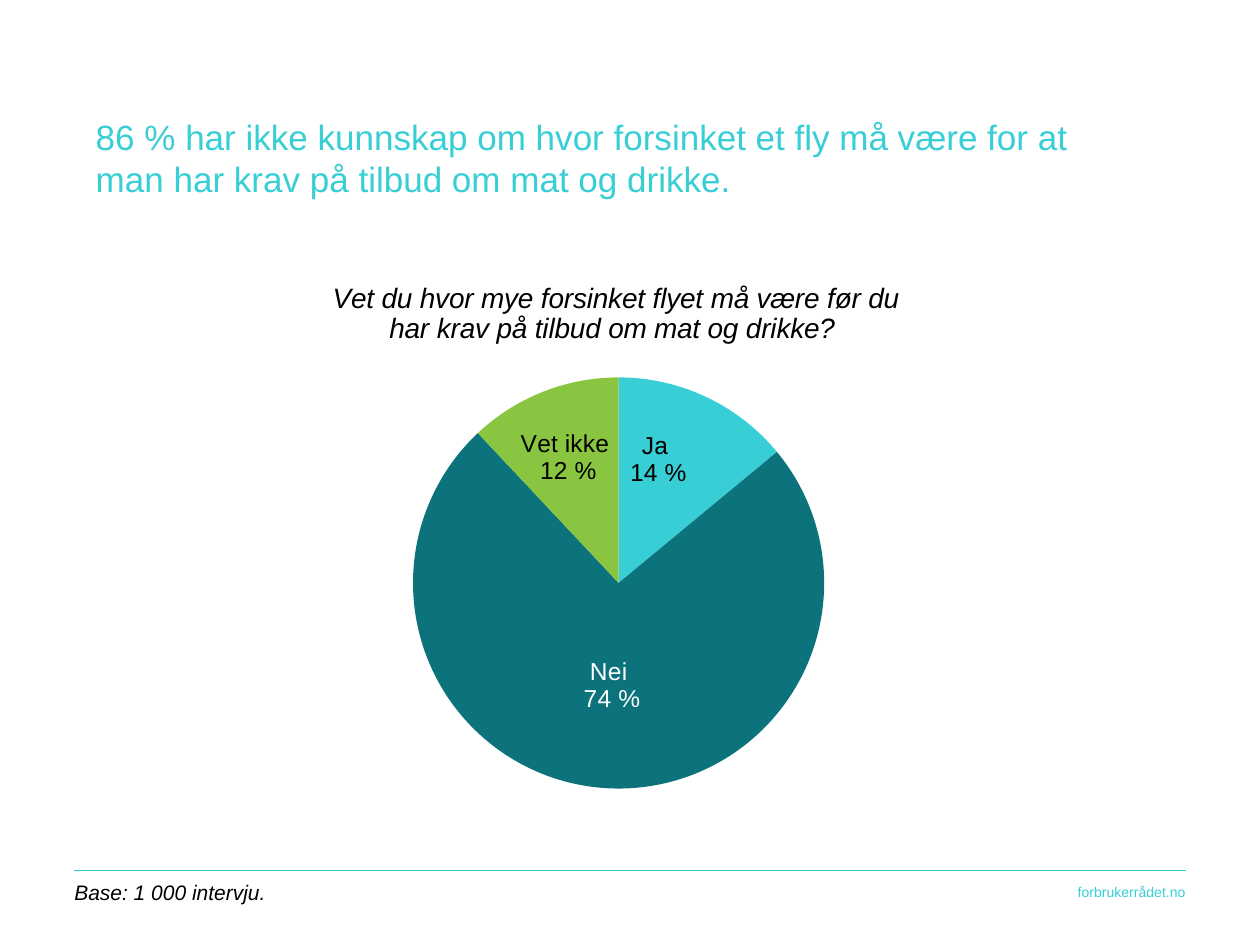
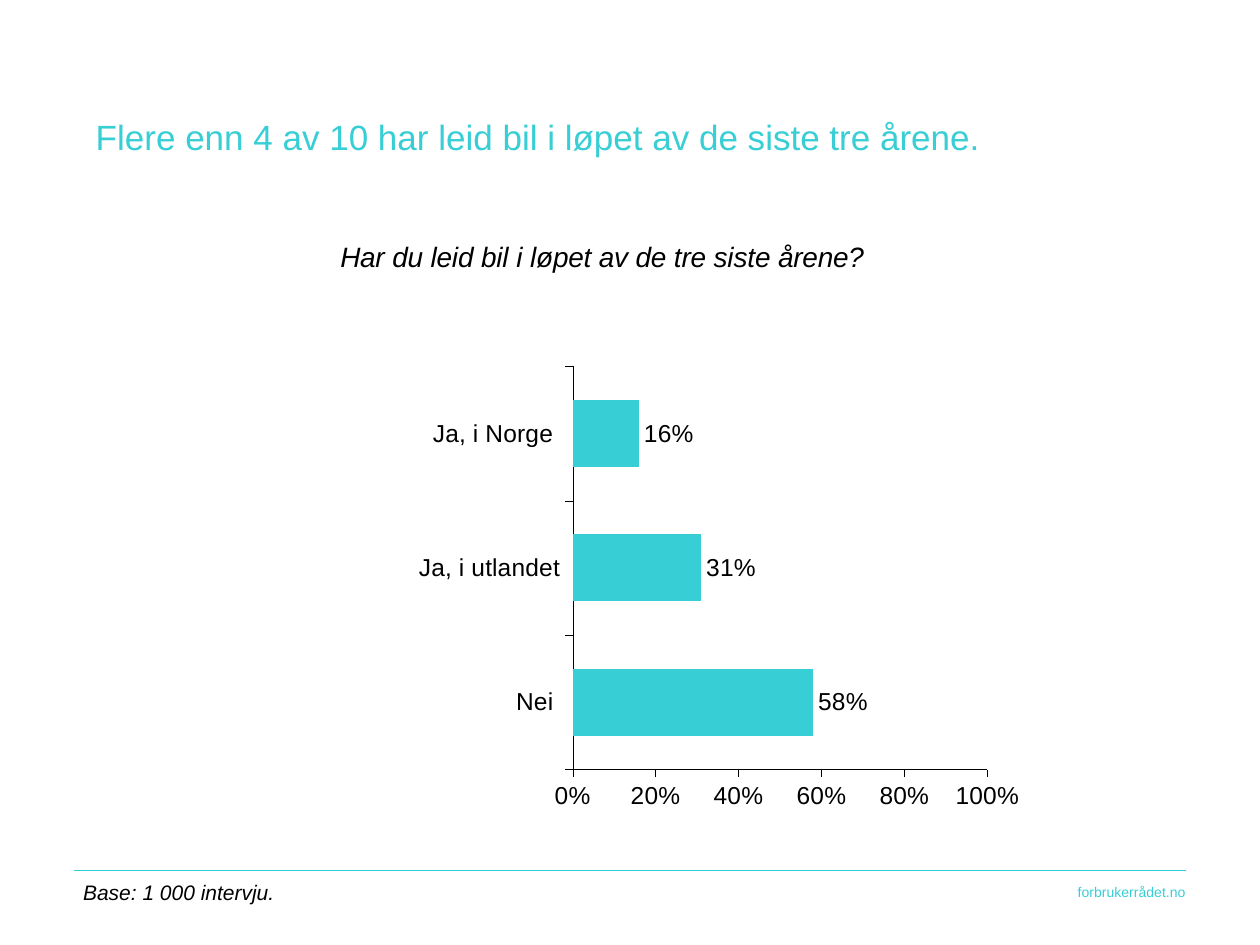
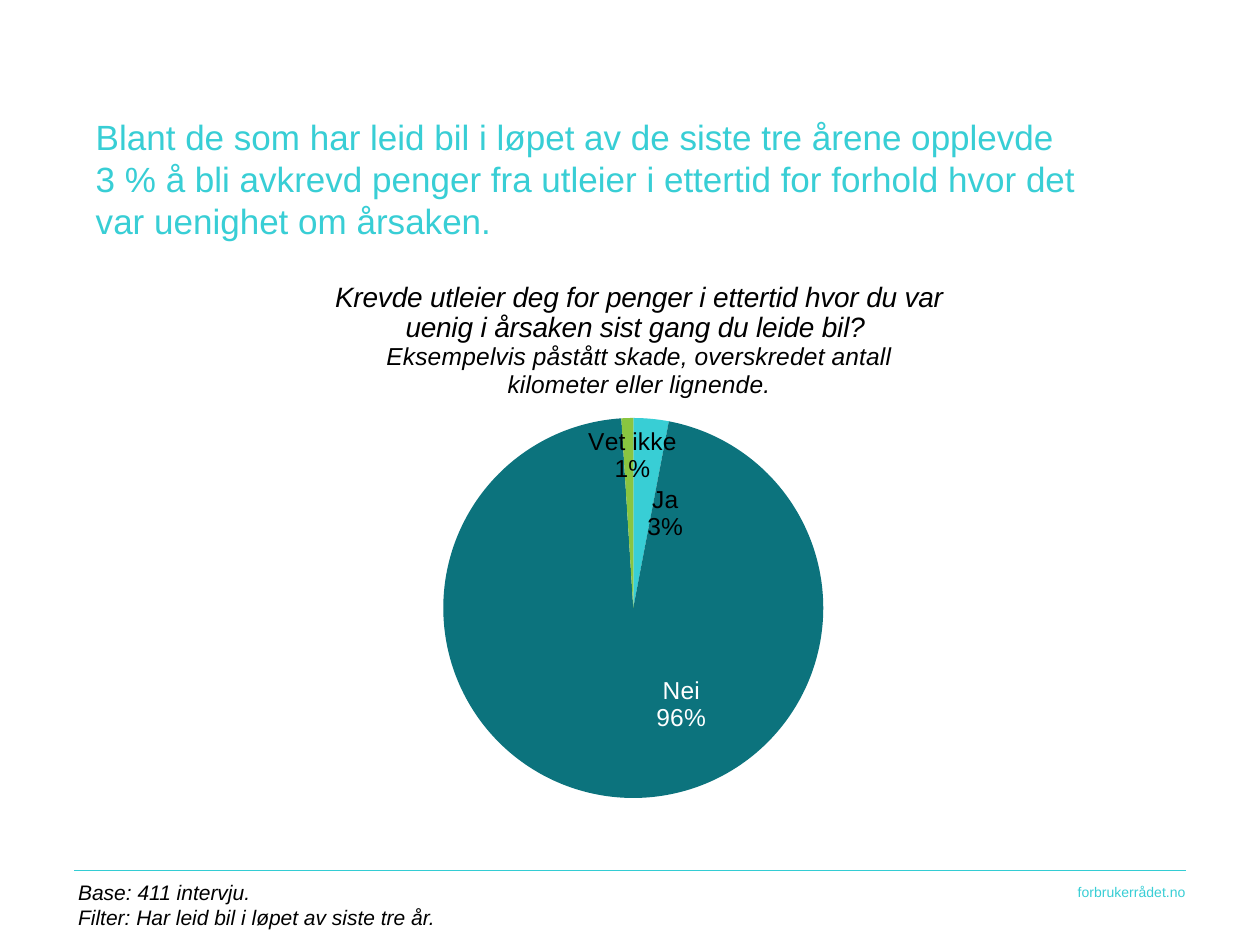
"""Builds three survey slides on flight delays and car rental."""
from dataclasses import dataclass

from lxml import etree
from pptx import Presentation
from pptx.chart.data import CategoryChartData
from pptx.dml.color import RGBColor
from pptx.enum.chart import XL_CHART_TYPE, XL_LABEL_POSITION, XL_TICK_MARK
from pptx.enum.shapes import MSO_CONNECTOR
from pptx.enum.text import MSO_ANCHOR, PP_ALIGN
from pptx.oxml.ns import qn
from pptx.util import Inches, Pt

PIE, BAR = XL_CHART_TYPE.PIE, XL_CHART_TYPE.BAR_CLUSTERED
CENTER, OUTSIDE_END = XL_LABEL_POSITION.CENTER, XL_LABEL_POSITION.OUTSIDE_END
TICK_OUT, TICK_NONE = XL_TICK_MARK.OUTSIDE, XL_TICK_MARK.NONE
STRAIGHT = MSO_CONNECTOR.STRAIGHT
TOP, BOTTOM = MSO_ANCHOR.TOP, MSO_ANCHOR.BOTTOM
LEFT, RIGHT = PP_ALIGN.LEFT, PP_ALIGN.RIGHT


@dataclass(frozen=True)
class Theme:
    """Colours, font and type sizes of the deck."""
    font: str = "Arial"
    turquoise: RGBColor = RGBColor(0x38, 0xCE, 0xD5)
    rule: RGBColor = RGBColor(0x33, 0xCD, 0xD4)
    teal: RGBColor = RGBColor(0x0C, 0x73, 0x7D)
    green: RGBColor = RGBColor(0x89, 0xC5, 0x40)
    black: RGBColor = RGBColor(0, 0, 0)
    white: RGBColor = RGBColor(255, 255, 255)
    headline: int = 20
    question: int = 16
    label: int = 14
    base: int = 12
    footer: int = 8


def set_layout(parent, index, x, y, size=None):
    """Place a chart part by percentages of the chart area."""
    previous = parent.find(qn("c:layout"))
    if previous is not None:
        parent.remove(previous)
    layout = etree.Element(qn("c:layout"))
    manual = etree.SubElement(layout, qn("c:manualLayout"))
    modes = {"xMode": "edge", "yMode": "edge"}
    if size:
        modes = {"layoutTarget": "inner", **modes}
    elif parent.tag == qn("c:dLbl"):
        modes = {}
    shares = dict(zip("xywh", (x, y, *(size or ()))))
    fractions = {key: value / 100 for key, value in shares.items()}
    for key, value in {**modes, **fractions}.items():
        etree.SubElement(manual, qn(f"c:{key}")).set("val", str(value))
    parent.insert(index, layout)


class SurveyDeck:
    """Holds the theme and the current slide, and adds elements to it."""

    def __init__(self, theme):
        self.theme = theme
        self.presentation = Presentation()
        self.presentation.slide_width = Inches(10)
        self.presentation.slide_height = Inches(7.5)
        self.slide = None

    def style(self, font, size, color, italic=False):
        """Apply the deck font."""
        font.name, font.size, font.bold = self.theme.font, Pt(size), False
        font.italic, font.color.rgb = italic, color

    def add_text(self, text, box, size, color, italic=False, align=LEFT,
                 anchor=TOP):
        """Add a text box without margins."""
        frame = self.slide.shapes.add_textbox(*map(Inches, box)).text_frame
        frame.word_wrap, frame.vertical_anchor = True, anchor
        frame.margin_left = frame.margin_right = 0
        frame.margin_top = frame.margin_bottom = 0
        frame.text = text
        for paragraph in frame.paragraphs:
            paragraph.alignment = align
            self.style(paragraph.runs[0].font, size, color, italic)

    def new_slide(self, headline, height, base, base_left):
        """Start a slide with footer, headline and base note."""
        theme = self.theme
        self.slide = self.presentation.slides.add_slide(
            self.presentation.slide_layouts[6])
        rule = self.slide.shapes.add_connector(
            STRAIGHT, Inches(0.59), Inches(6.91), Inches(9.41), Inches(6.91))
        rule.line.color.rgb, rule.line.width = theme.rule, Pt(0.92)
        etree.SubElement(rule._element.spPr, qn("a:effectLst"))
        self.add_text("forbrukerrådet.no", (6.5, 7.01, 2.91, 0.14),
                      theme.footer, theme.turquoise, align=RIGHT)
        self.add_text(headline, (0.76, 0.92, 7.95, height), theme.headline,
                      theme.turquoise)
        base_height = 0.2 * len(base.splitlines())
        self.add_text(base, (base_left, 6.98, 4.57, base_height), theme.base,
                      theme.black, italic=True, anchor=BOTTOM)

    def add_chart(self, kind, box, answers, question, question_at, plot_box,
                  number_format, detail=""):
        """Add a chart of the answers with the question as its title."""
        theme = self.theme
        data = CategoryChartData(number_format=number_format)
        data.categories = answers.keys()
        data.add_series("Series 1", answers.values())
        chart = self.slide.shapes.add_chart(
            kind, *map(Inches, box), data).chart
        self.style(chart.font, theme.label, theme.black)
        chart.has_legend, chart.has_title = False, True
        title = chart.chart_title
        title.include_in_layout = False
        title.text_frame.text = question + detail
        question_lines = len(question.splitlines())
        for number, paragraph in enumerate(title.text_frame.paragraphs):
            size = theme.question if number < question_lines else theme.label
            self.style(paragraph.font, size, theme.black, italic=True)
            self.style(paragraph.runs[0].font, size, theme.black, italic=True)
        set_layout(title._element, 1, *question_at)
        plot_area = chart._chartSpace.chart.plotArea
        set_layout(plot_area, 0, *plot_box[:2], size=plot_box[2:])
        plot = chart.plots[0]
        plot.vary_by_categories = kind == PIE
        labels = plot.series[0].data_labels
        labels.number_format = "0%"
        labels.number_format_is_linked = False
        self.style(labels.font, theme.label, theme.black)
        return chart

    def add_pie(self, label_shifts, slice_texts=(), **content):
        """Add a pie with category and share in every slice."""
        theme = self.theme
        chart = self.add_chart(PIE, **content)
        series = chart.plots[0].series[0]
        labels = series.data_labels
        labels.show_category_name, labels.position = True, CENTER
        labels.show_value = bool(slice_texts)
        labels.show_percentage = not slice_texts
        slices = ((theme.turquoise, theme.black), (theme.teal, theme.white),
                  (theme.green, theme.black))
        for index, (fill, ink) in enumerate(slices):
            point = series.points[index]
            point.format.fill.solid()
            point.format.fill.fore_color.rgb = fill
            label = point.data_label
            if slice_texts:
                label.text_frame.text = slice_texts[index]
                for paragraph in label.text_frame.paragraphs:
                    self.style(paragraph.runs[0].font, theme.label, ink)
            else:
                self.style(label.font, theme.label, ink)
            label.position = CENTER
        for label, shift in zip(labels._element.findall(qn("c:dLbl")),
                                label_shifts):
            set_layout(label, 1, *shift)
            label.find(qn("c:showCatName")).set("val", "1")
            if not slice_texts:
                label.insert(2, etree.Element(
                    qn("c:numFmt"), formatCode="0%", sourceLinked="0"))
                label.find(qn("c:showVal")).set("val", "0")
                label.find(qn("c:showPercent")).set("val", "1")
            etree.SubElement(label, qn("c:separator")).text = "\n"

    def add_bars(self, **content):
        """Add horizontal bars on a percentage axis."""
        theme = self.theme
        chart = self.add_chart(BAR, **content)
        plot = chart.plots[0]
        plot.gap_width = 100
        series = plot.series[0]
        series.format.fill.solid()
        series.format.fill.fore_color.rgb = theme.turquoise
        series.data_labels.show_value = True
        series.data_labels.position = OUTSIDE_END
        for axis in (chart.category_axis, chart.value_axis):
            axis.has_major_gridlines = False
            axis.major_tick_mark, axis.minor_tick_mark = TICK_OUT, TICK_NONE
            axis.format.line.color.rgb = theme.black
            axis.format.line.width = Pt(0.22)
            self.style(axis.tick_labels.font, theme.label, theme.black)
        shares = chart.value_axis
        shares.minimum_scale, shares.maximum_scale = 0, 1
        shares.major_unit = 0.2
        shares.tick_labels.number_format = "0%"
        shares.tick_labels.number_format_is_linked = False


def main():
    """Build and save the deck."""
    deck = SurveyDeck(Theme())

    deck.new_slide("86 % har ikke kunnskap om hvor forsinket et fly må være "
                   "for at man har krav på tilbud om mat og drikke.",
                   0.91, "Base: 1 000 intervju.", 0.59)
    deck.add_pie(
        box=(1.93, 2.18, 6.1, 4.58),
        answers={"Ja": 0.14, "Nei": 0.74, "Vet ikke": 0.12},
        question=" Vet du hvor mye forsinket flyet må være før du "
                 "har krav på tilbud om mat og drikke?",
        question_at=(10, 0), plot_box=(22.1, 17.8, 53.5, 71.3),
        label_shifts=((-0.5, -5.3), (0, 0), (-1.6, -5.2)),
        slice_texts=("Ja \n14 %", "Nei \n74 %", "Vet ikke \n12 %"),
        number_format="0%")

    deck.new_slide("Flere enn 4 av 10 har leid bil i løpet av de siste "
                   "tre årene.", 0.34, "Base: 1 000 intervju.", 0.66)
    deck.add_bars(
        box=(1.14, 1.86, 7.17, 4.85),
        answers={"Nei ": 0.58, "Ja, i utlandet": 0.31, "Ja, i Norge ": 0.16},
        question="Har du leid bil i løpet av de tre siste årene?",
        question_at=(21.2, 0), plot_box=(47.5, 21.6, 45.9, 66),
        number_format="0%")

    deck.new_slide("Blant de som har leid bil i løpet av de siste tre årene "
                   "opplevde\n3 % å bli avkrevd penger fra utleier i ettertid "
                   "for forhold hvor det var uenighet om årsaken.", 1.25,
                   "Base: 411 intervju.\n"
                   "Filter: Har leid bil i løpet av siste tre år.", 0.62)
    deck.add_pie(
        box=(2.63, 2.18, 6.13, 4.57),
        answers={"Ja": 3, "Nei": 96, "Vet ikke": 1},
        question="Krevde utleier deg for penger i ettertid hvor du var\n"
                 "uenig i årsaken sist gang du leide bil? \n",
        detail="Eksempelvis påstått skade, overskredet antall\n"
               "kilometer eller lignende.",
        question_at=(0, 0.3), plot_box=(10.6, 24.9, 57, 66),
        label_shifts=((3, 0), (7, 0.3), (0.3, -10)),
        number_format="General")

    deck.presentation.save("out.pptx")


if __name__ == "__main__":
    main()
